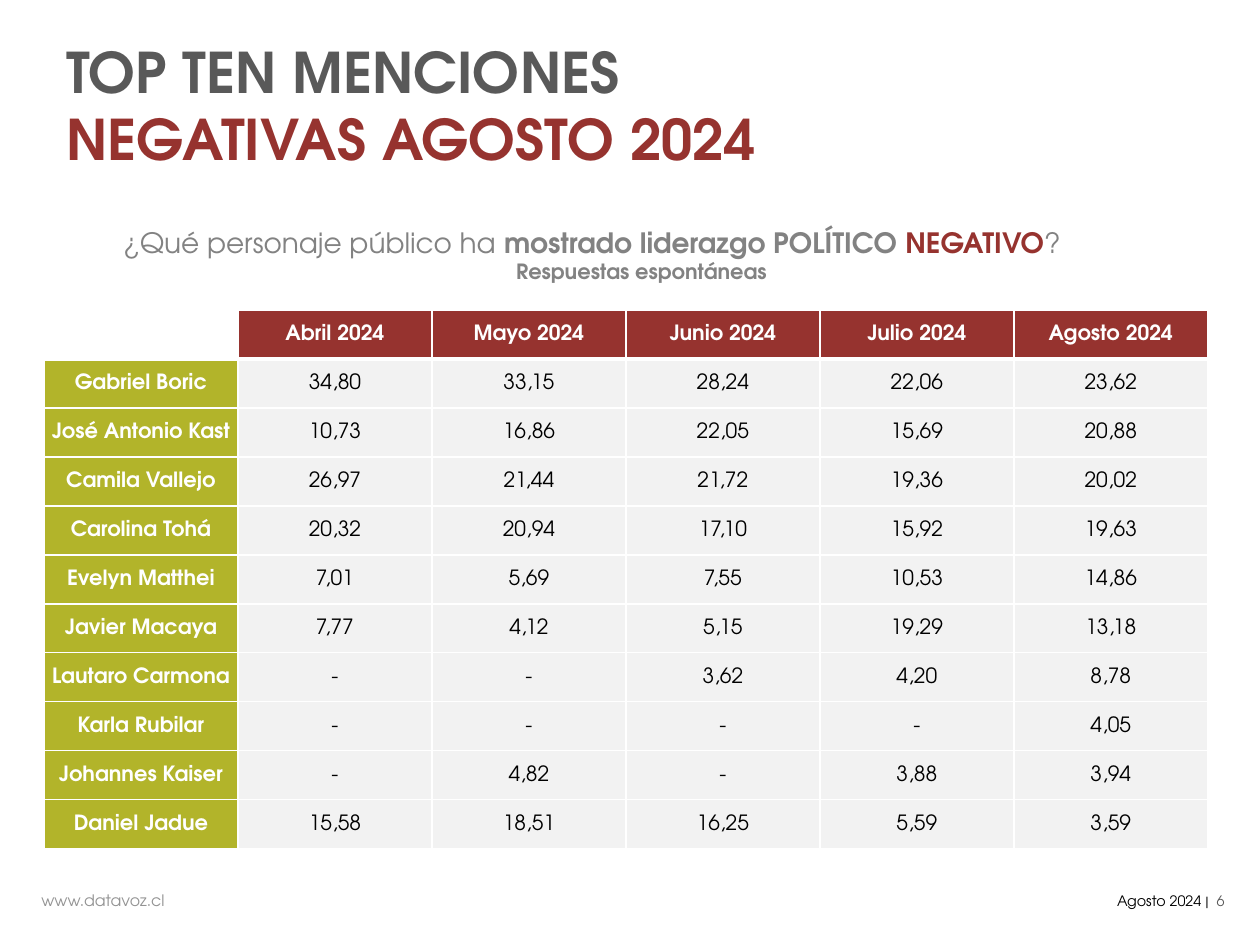
from dataclasses import dataclass

from lxml import etree
from pptx import Presentation
from pptx.dml.color import RGBColor
from pptx.enum import text
from pptx.oxml import ns
from pptx.util import Pt


@dataclass(frozen=True)
class Theme:
    face: str = "TeX Gyre Adventor"
    red: str = "96332F"
    lime: str = "B2B42A"
    dark: str = "595959"
    gray: str = "828282"
    pale: str = "939393"
    cell: str = "F2F2F2"
    white: str = "FFFFFF"
    black: str = "000000"
    title: float = 32
    ask: float = 16
    body: float = 12
    site: float = 9
    foot: float = 8.2


T = Theme()
A = text.PP_ALIGN
MID = text.MSO_ANCHOR.MIDDLE
TOP = text.MSO_ANCHOR.TOP

MONTHS = ["Abril 2024", "Mayo 2024", "Junio 2024", "Julio 2024", "Agosto 2024"]
SCORES = {
    "Gabriel Boric": "34,80 33,15 28,24 22,06 23,62",
    "José Antonio Kast": "10,73 16,86 22,05 15,69 20,88",
    "Camila Vallejo": "26,97 21,44 21,72 19,36 20,02",
    "Carolina Tohá": "20,32 20,94 17,10 15,92 19,63",
    "Evelyn Matthei": "7,01 5,69 7,55 10,53 14,86",
    "Javier Macaya": "7,77 4,12 5,15 19,29 13,18",
    "Lautaro Carmona": "- - 3,62 4,20 8,78",
    "Karla Rubilar": "- - - - 4,05",
    "Johannes Kaiser": "- 4,82 - 3,88 3,94",
    "Daniel Jadue": "15,58 18,51 16,25 5,59 3,59",
}


def px(n):
    return round(n * 914400 / 126)


def style(font, size, color, bold=False):
    font.name = T.face
    font.size = Pt(size)
    font.bold = bold
    font.color.rgb = RGBColor.from_string(color)


def add_box(slide, x, y, w, h, anchor=TOP, wrap=True):
    frame = slide.shapes.add_textbox(px(x), px(y), px(w), px(h)).text_frame
    frame.word_wrap = wrap
    frame.vertical_anchor = anchor
    return frame


def write(para, words, size, color, bold=False, align=A.LEFT):
    para.text = words
    para.alignment = align
    style(para.font, size, color, bold)


def write_runs(para, size, parts):
    for words, color, bold in parts:
        run = para.add_run()
        run.text = words
        style(run.font, size, color, bold)


def set_edges(cell, top, low):
    props = cell._tc.get_or_add_tcPr()
    for side, width in (("L", 1), ("R", 1), ("T", top), ("B", low)):
        line = etree.SubElement(props, ns.qn("a:ln" + side), w=str(Pt(width)))
        fill = etree.SubElement(line, ns.qn("a:solidFill"))
        etree.SubElement(fill, ns.qn("a:srgbClr"), val=T.white)


def fill_cell(cell, words, row, col):
    head = row == 0 or col == 0
    write(cell.text_frame.paragraphs[0], words, T.body,
          T.white if head else T.black, head, A.CENTER)
    cell.vertical_anchor = MID
    cell.margin_left = cell.margin_right = cell.margin_top = px(1)
    cell.margin_bottom = 0
    set_edges(cell, 3 if row == 1 else 1, 3 if row == 0 else 1)
    if not words:
        cell.fill.background()
        return
    cell.fill.solid()
    back = T.red if row == 0 else T.lime if col == 0 else T.cell
    cell.fill.fore_color.rgb = RGBColor.from_string(back)


def add_scores(slide, x, y, wide, high):
    rows = [["", *MONTHS]]
    rows += [[name, *vals.split()] for name, vals in SCORES.items()]
    count, cols = len(rows), len(rows[0])
    table = slide.shapes.add_table(
        count, cols, px(x), px(y), px(wide * cols), px(high * count)).table
    table.first_row = table.horz_banding = False
    for r, vals in enumerate(rows):
        for c, words in enumerate(vals):
            fill_cell(table.cell(r, c), words, r, c)


def add_title(slide):
    para = add_box(slide, 35, 54, 833, 101, MID).paragraphs[0]
    para._p.get_or_add_pPr().set("marL", str(px(19)))
    write_runs(para, T.title, [
        ("TOP TEN MENCIONES ", T.dark, True),
        ("NEGATIVAS AGOSTO 2024", T.red, True),
    ])


def add_ask(slide):
    frame = add_box(slide, 111, 219, 1067, 72)
    write_runs(frame.paragraphs[0], T.ask, [
        ("¿Qué personaje público ha ", T.gray, False),
        ("mostrado liderazgo POLÍTICO ", T.gray, True),
        ("NEGATIVO", T.red, True),
        ("?", T.gray, False),
    ])
    write(frame.add_paragraph(), "Respuestas espontáneas ", T.body,
          T.gray, True, A.CENTER)


def add_foot(slide):
    site = add_box(slide, 29, 885, 272, 32)
    write(site.paragraphs[0], "www.datavoz.cl", T.site, T.pale)
    page = add_box(slide, 1130, 876, 107, 50, MID)
    write(page.paragraphs[0], "6", T.foot, T.dark, align=A.RIGHT)
    date = add_box(slide, 1095, 886, 130, 30, wrap=False)
    write(date.paragraphs[0], "Agosto 2024 | ", T.foot, T.black, align=A.RIGHT)


def main():
    deck = Presentation()
    deck.slide_width, deck.slide_height = px(1260), px(945)
    slide = deck.slides.add_slide(deck.slide_layouts[6])
    add_title(slide)
    add_ask(slide)
    add_scores(slide, 44, 310, 194, 49)
    add_foot(slide)
    deck.save("out.pptx")


if __name__ == "__main__":
    main()
